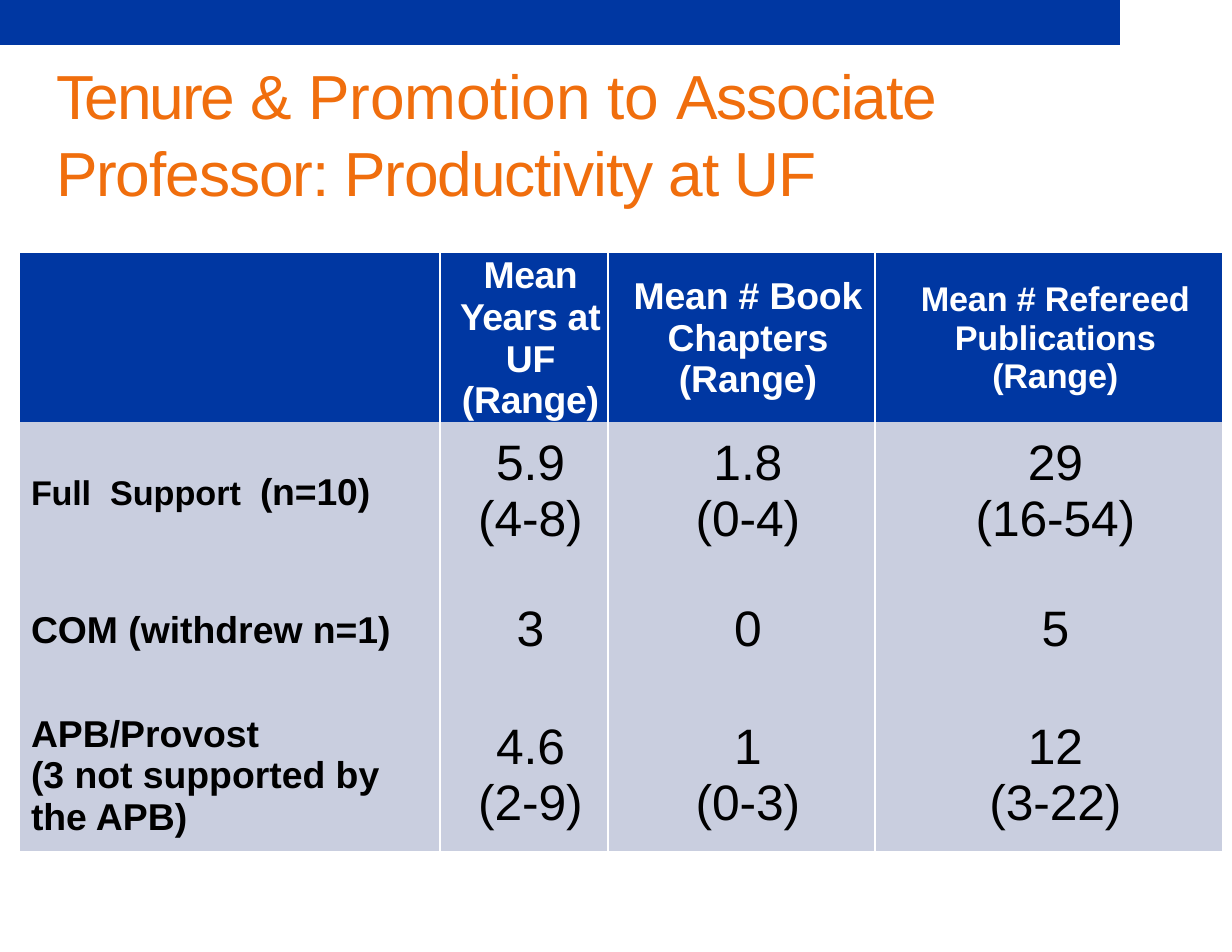
from lxml.etree import SubElement
from pptx import Presentation
from pptx.dml.color import RGBColor
from pptx.enum.shapes import MSO_SHAPE
from pptx.enum.text import MSO_ANCHOR, MSO_AUTO_SIZE, PP_ALIGN
from pptx.oxml.ns import qn
from pptx.util import Emu, Pt

PX = 914400 // 112
COLORS = {"blue": "0037A2", "orange": "F06E0D", "gray": "C9CEDF",
          "white": "FFFFFF", "black": "000000"}
NO_STYLE = "{2D5ABB26-0587-4C30-8999-92F81FD0307C}"

TITLE = [[("Tenure ", 40, -1.4), ("& Promotion to ", 40, -0.1),
          ("Associate Professor: Productivity at UF", 40, -0.7)]]
HEADERS = [
    [],
    [[("Mean Years ", 24, -0.3), ("at ", 24, 0), ("UF (Range)", 24, -0.2)]],
    [[(t, 24, -0.1)] for t in ("Mean # Book", "Chapters", "(Range)")],
    [[(t, 22, -0.1)] for t in ("Mean # Refereed", "Publications", "(Range)")],
]
ROWS = [
    ([("Full", 22, -0.1), (" ", 22, 6.1), ("Support", 22, 0), (" ", 22, 6.1),
      ("(n=10)", 24, -0.1)],
     [["5.9", "(4-8)"], ["1.8", "(0-4)"], ["29", "(16-54)"]]),
    ([("COM (withdrew n=1)", 24, 0)], [["3"], ["0"], ["5"]]),
    ([("APB/Provost\n(3 not supported by the APB)", 24, 0)],
     [["4.6", "(2-9)"], ["1", "(0-3)"], ["12", "(3-22)"]]),
]
COL_WIDTHS = [421, 168, 267, 348]
ROW_HEIGHTS = [165, 138, 138, 154]
TABLE_LEFT, TABLE_TOP = 19, 252


def px(n):
    return Emu(n * PX)


def rgb(name):
    return RGBColor.from_string(COLORS[name])


def write(tf, paragraphs, color, bold=False, align=PP_ALIGN.LEFT,
          indent=13, before=0, line=1.0):
    for i, runs in enumerate(paragraphs):
        p = tf.add_paragraph() if i else tf.paragraphs[0]
        fmt = {"alignment": align, "line_spacing": line,
               "space_before": Pt(0 if i else before)}
        for key, value in fmt.items():
            setattr(p, key, value)
        p_pr = p._p.get_or_add_pPr()
        p_pr.set("marL", str(px(indent)))
        p_pr.set("indent", "0")
        for text, size, spacing in runs:
            for j, part in enumerate(text.split("\n")):
                if j:
                    p.add_line_break()
                r = p.add_run()
                r.text = part
                font = {"name": "Arial", "size": Pt(size), "bold": bold}
                for key, value in font.items():
                    setattr(r.font, key, value)
                r.font.color.rgb = rgb(color)
                r._r.get_or_add_rPr().set("spc", str(round(spacing * 100)))


def format_cell(cell, fill, sides, inset_top):
    margins = {"margin_left": 0, "margin_right": 0, "margin_bottom": 0,
               "margin_top": px(inset_top),
               "vertical_anchor": MSO_ANCHOR.MIDDLE}
    for key, value in margins.items():
        setattr(cell, key, value)
    tc_pr = cell._tc.get_or_add_tcPr()
    for side in "LRTB":
        if side in sides:
            ln = SubElement(tc_pr, qn(f"a:ln{side}"), w=str(Pt(1)))
            solid = SubElement(ln, qn("a:solidFill"))
            SubElement(solid, qn("a:srgbClr"), val=COLORS["white"])
    cell.fill.solid()
    cell.fill.fore_color.rgb = rgb(fill)


prs = Presentation()
prs.slide_width, prs.slide_height = px(1232), px(952)
s = prs.slides.add_slide(prs.slide_layouts[5])

bar = s.shapes.add_shape(MSO_SHAPE.RECTANGLE, 0, 0, px(1120), px(45))
bar.shadow.inherit = False
bar.fill.solid()
bar.fill.fore_color.rgb = rgb("blue")
bar.line.fill.background()

title = s.shapes.title
title.left, title.top, title.width, title.height = map(px, (55, 57, 933, 152))
tf = title.text_frame
frame = {"margin_left": 0, "margin_right": 0, "margin_top": px(1),
         "margin_bottom": 0, "word_wrap": True,
         "auto_size": MSO_AUTO_SIZE.NONE,
         "vertical_anchor": MSO_ANCHOR.BOTTOM}
for key, value in frame.items():
    setattr(tf, key, value)
write(tf, TITLE, "orange", indent=1, before=0.9, line=1.03)

table_frame = s.shapes.add_table(
    len(ROW_HEIGHTS), len(COL_WIDTHS), px(TABLE_LEFT), px(TABLE_TOP),
    px(sum(COL_WIDTHS)), px(sum(ROW_HEIGHTS)))
table = table_frame.table
table.first_row = table.horz_banding = False
table._tbl.tblPr.find(qn("a:tableStyleId")).text = NO_STYLE
for column, width in zip(table.columns, COL_WIDTHS):
    column.width = px(width)
for row, height in zip(table.rows, ROW_HEIGHTS):
    row.height = px(height)

for c, header in enumerate(HEADERS):
    cell = table.cell(0, c)
    format_cell(cell, "blue", "LRT", 3)
    write(cell.text_frame, header, "white", True, PP_ALIGN.CENTER, before=2.4)

for r_index, (label, values) in enumerate(ROWS, 1):
    sides = "LRB" if r_index == len(ROWS) else "LR"
    cell = table.cell(r_index, 0)
    format_cell(cell, "gray", sides, 3)
    write(cell.text_frame, [label], "black", True, indent=12, before=2.4)
    for c, lines in enumerate(values, 1):
        cell = table.cell(r_index, c)
        format_cell(cell, "gray", sides, 1)
        write(cell.text_frame, [[(t, 32, -0.1)] for t in lines], "black",
              align=PP_ALIGN.CENTER, before=0.4)

prs.save("out.pptx")
